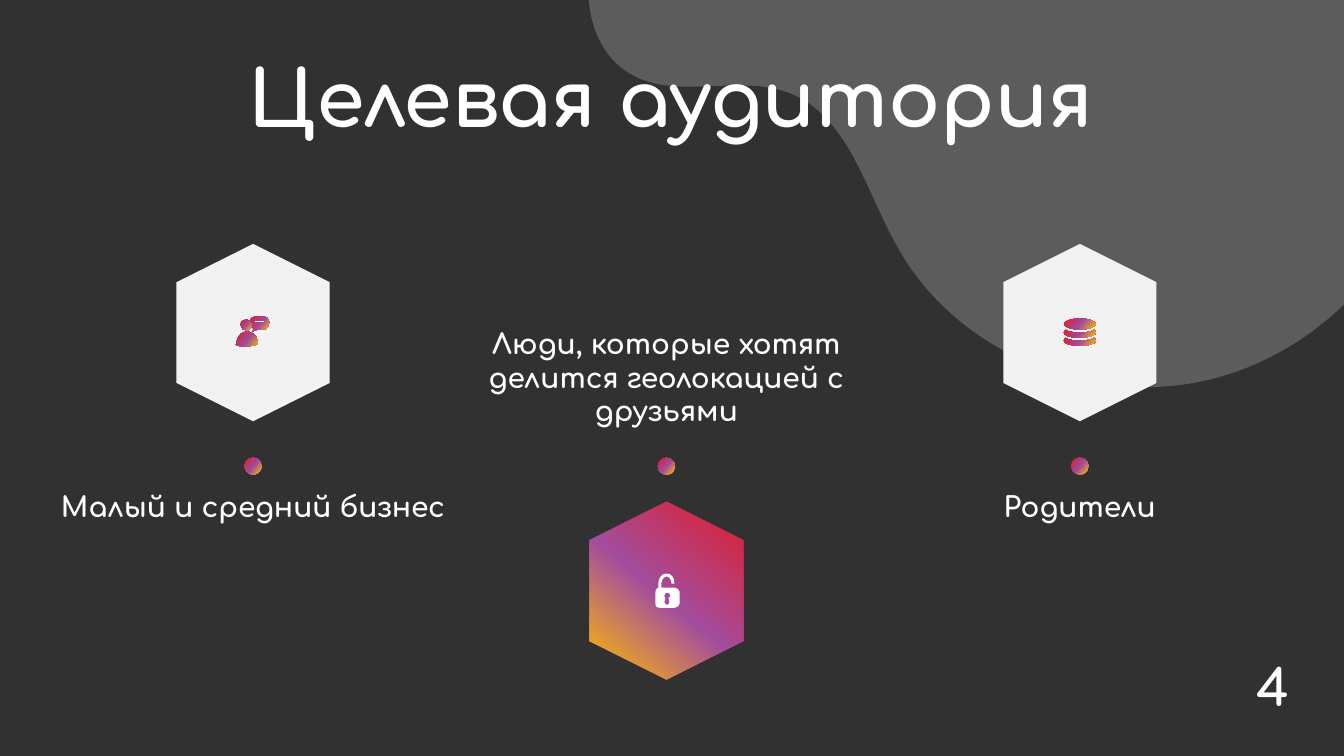
from copy import deepcopy
from dataclasses import dataclass

from lxml import etree
from pptx import Presentation
from pptx.dml.color import RGBColor
from pptx.enum.shapes import MSO_SHAPE
from pptx.enum.text import MSO_ANCHOR, MSO_AUTO_SIZE, PP_ALIGN
from pptx.oxml.ns import qn
from pptx.util import Emu, Pt

HEXAGON, OVAL = MSO_SHAPE.HEXAGON, MSO_SHAPE.OVAL
TOP, MIDDLE = MSO_ANCHOR.TOP, MSO_ANCHOR.MIDDLE
CENTER = PP_ALIGN.CENTER
NO_RESIZE, GROW = MSO_AUTO_SIZE.NONE, MSO_AUTO_SIZE.SHAPE_TO_FIT_TEXT

# Grid of fine cells, 100 to the inch; every length below is a count of cells
CELL = 9144
COLUMNS, ROWS = 1333, 750
FIRST_CENTER, PITCH = 251, 410
HEXAGON_SIZE = (176, 152)
DOT_ROW, DOT_SIZE = 462.5, 17

FONT = "Comfortaa"
COLORS = {"background": "313131", "blob": "FEFEFE", "text": "FFFFFF", "tile": "F2F2F2"}
GRADIENT = ((0, "DF1E2C"), (0.53, "A34D9D"), (1, "FFC000"))
GRADIENT_ANGLE = 320  # counter-clockwise
BLOB_ALPHA = 21000


@dataclass(frozen=True)
class Contour:
    """A start point, then lines (x, y) and cubic curves (x1, y1, x2, y2, x, y)."""
    start: tuple
    segments: tuple

    def points(self) -> list:
        return [segment[i:i + 2] for segment in self.segments
                for i in range(0, len(segment), 2)]


@dataclass(frozen=True)
class Layer:
    contours: tuple
    drop: int = 0


@dataclass(frozen=True)
class Audience:
    label: str
    label_top: int
    label_size: tuple
    anchor: MSO_ANCHOR
    hexagon_row: int
    hexagon_fill: str | None  # None means the gradient
    icon: tuple
    icon_fill: str | None
    icon_lid: tuple | None = None  # ellipse: centre x, centre y, width, height


# Outlines, measured from the centre of their hexagon (the blob from the corner)
BLOB = Contour((584, 0), (
    (586, 29, 599, 57, 623, 72), (669, 101, 731, 73, 782, 92),
    (841, 114, 858, 188, 889, 243), (948, 352, 1087, 407, 1206, 375),
    (1254, 362, 1298, 336, COLUMNS, 302), (COLUMNS, 0)))
DISK = Contour((14, -3), (
    (11, -1, 6, 0, 0, 0), (-6, 0, -12, -1, -14, -3), (-15, -2, -16, -1, -16, 0),
    (-16, 3, -9, 5, 0, 5), (8, 5, 16, 3, 16, 0), (16, -1, 15, -2, 14, -3)))
BODY = Contour((-6, -1), (
    (-16, -1, -17, 12, -17, 12), (-11, 16, 4, 12, 4, 12), (5, 12, 5, -1, -6, -1)))
HEAD = Contour((-3, -12), (
    (-4, -12, -6, -13, -7, -13), (-11, -12, -13, -10, -12, -7),
    (-12, -4, -9, -2, -6, -2), (-4, -2, -3, -4, -2, -5), (-1, -9, -3, -12, -3, -12)))
BUBBLE = Contour((9, -16), (
    (3, -16), (0, -16, -2, -15, -3, -13), (-3, -12, -1, -11, -1, -10),
    (0, -8, 0, -6, -1, -5), (0, -4, 0, -4, 1, -4), (-1, -1), (5, -3), (9, -3),
    (13, -3, 16, -6, 16, -10), (16, -14, 13, -16, 9, -16)))
BUBBLE_LINES = (Contour((11, -8), ((1, -8), (1, -9), (11, -9))),
                Contour((11, -10), ((1, -10), (1, -12), (11, -12))))
LOCK = Contour((8, -3), (
    (-5, -3), (-5, -7), (-5, -11, -2, -14, 0, -14), (3, -14, 5, -11, 5, -7), (8, -7),
    (8, -13, 5, -17, 0, -17), (-4, -17, -8, -13, -8, -7), (-8, -3),
    (-10, -2, -11, -1, -11, 2), (-11, 13), (-11, 15, -10, 17, -7, 17), (8, 17),
    (10, 17, 13, 15, 13, 13), (13, 1), (13, -1, 10, -3, 8, -3)))
KEYHOLE = Contour((2, 7), (
    (3, 11), (3, 13, 2, 14, 1, 14), (-1, 14, -2, 13, -2, 11), (-1, 7),
    (-2, 7, -2, 6, -2, 5), (-2, 3, -1, 2, 1, 2), (2, 2, 4, 3, 4, 5), (4, 6, 3, 7, 2, 7)))

PERSON_ICON = (Layer((BODY,)), Layer((HEAD,)), Layer((BUBBLE, *BUBBLE_LINES)))
LOCK_ICON = (Layer((LOCK, KEYHOLE)),)
DISKS_ICON = (Layer((DISK,), 8), Layer((DISK,)))

AUDIENCES = (
    Audience("Малый и средний бизнес", 481, (412, 87), TOP, 330,
             COLORS["tile"], PERSON_ICON, None),
    Audience("Люди, которые хотят делится геолокацией с друзьями", 322, (445, 104), MIDDLE,
             586, None, LOCK_ICON, COLORS["text"]),
    Audience("Родители", 481, (467, 143), TOP, 330,
             COLORS["tile"], DISKS_ICON, None, (0, -8.5, 31, 11)),
)


def cells(count: float) -> Emu:
    return Emu(round(count * CELL))


def paint(shape, color: str | None) -> None:
    """Fill with one colour, or with the gradient when there is none."""
    shape.shadow.inherit = False
    shape.line.fill.background()
    if color:
        shape.fill.solid()
        shape.fill.fore_color.rgb = RGBColor.from_string(color)
        return
    shape.fill.gradient()
    shape.fill.gradient_angle = GRADIENT_ANGLE
    stop_list = shape._element.spPr.find(qn("a:gradFill")).find(qn("a:gsLst"))
    stop_list.append(deepcopy(stop_list[-1]))
    for stop, (position, stop_color) in zip(shape.fill.gradient_stops, GRADIENT):
        stop.position = position
        stop.color.rgb = RGBColor.from_string(stop_color)


def bend(shape, contours: tuple) -> None:
    """Join the three lines of each curved segment into one cubic curve."""
    lines = iter(list(shape._element.spPr.iter(qn("a:lnTo"))))
    for contour in contours:
        for segment in contour.segments:
            run = [next(lines) for _ in range(len(segment) // 2)]
            if len(run) == 1:
                continue
            curve = etree.Element(qn("a:cubicBezTo"))
            run[0].addprevious(curve)
            for line in run:
                curve.append(line[0])
                line.getparent().remove(line)


def add_outline(shapes, contours: tuple, x: float, y: float, color: str | None):
    """Draw closed contours as one freeform, in tenths of a cell."""
    def place(point: tuple) -> tuple:
        return (x + point[0]) * 10, (y + point[1]) * 10

    builder = shapes.build_freeform(*place(contours[0].start), scale=CELL / 10)
    for index, contour in enumerate(contours):
        if index:
            builder.move_to(*place(contour.start))
        builder.add_line_segments([place(p) for p in contour.points()], close=True)
    shape = builder.convert_to_shape()
    bend(shape, contours)
    paint(shape, color)
    return shape


def add_centered(shapes, kind, x: float, y: float, width: float, height: float,
                 color: str | None):
    shape = shapes.add_shape(kind, cells(x - width / 2), cells(y - height / 2),
                             cells(width), cells(height))
    paint(shape, color)
    return shape


def write(box, text: str, size: float, anchor, auto_size=NO_RESIZE) -> None:
    frame = box.text_frame
    frame.word_wrap = True
    frame.auto_size = auto_size
    frame.vertical_anchor = anchor
    paragraph = frame.paragraphs[0]
    paragraph.text = text
    paragraph.alignment = CENTER
    font = paragraph.font
    font.name, font.size, font.bold = FONT, Pt(size), True
    font.color.rgb = RGBColor.from_string(COLORS["text"])


def add_audience(page, audience: Audience, x: int) -> None:
    y = audience.hexagon_row
    tile = add_centered(page.shapes, HEXAGON, x, y, *HEXAGON_SIZE, audience.hexagon_fill)
    tile.rotation = 90
    icon = page.shapes.add_group_shape()
    for layer in audience.icon:
        add_outline(icon.shapes, layer.contours, x, y + layer.drop, audience.icon_fill)
    if audience.icon_lid:
        dx, dy, width, height = audience.icon_lid
        add_centered(icon.shapes, OVAL, x + dx, y + dy, width, height, audience.icon_fill)
    add_centered(page.shapes, OVAL, x, DOT_ROW, DOT_SIZE, DOT_SIZE, None)
    width, height = audience.label_size
    label = page.shapes.add_textbox(cells(x - width / 2), cells(audience.label_top),
                                    cells(width), cells(height))
    write(label, audience.label, 20, audience.anchor)


def main() -> None:
    deck = Presentation()
    deck.slide_width, deck.slide_height = cells(COLUMNS), cells(ROWS)
    page = deck.slides.add_slide(deck.slide_layouts[5])
    page.background.fill.solid()
    page.background.fill.fore_color.rgb = RGBColor.from_string(COLORS["background"])

    # Title
    title = page.shapes.title
    title.left, title.top, title.width, title.height = map(cells, (222, 43, 888, 118))
    write(title, "Целевая аудитория", 55.5, MIDDLE)
    title.text_frame.paragraphs[0].line_spacing = 0.9

    # Translucent blob behind the title
    blob = add_outline(page.shapes, (BLOB,), 0, 0, COLORS["blob"])
    blob_color = blob._element.spPr.find(qn("a:solidFill"))[0]
    etree.SubElement(blob_color, qn("a:alpha")).set("val", str(BLOB_ALPHA))
    title._element.addprevious(blob._element)

    # Audiences
    for index, audience in enumerate(AUDIENCES):
        add_audience(page, audience, FIRST_CENTER + index * PITCH)

    # Page number
    number = page.shapes.add_textbox(*map(cells, (1224, 641, 78, 81)))
    write(number, "4", 36, TOP, GROW)
    number.text_frame.margin_top = number.text_frame.margin_bottom = cells(10)

    deck.save("out.pptx")


if __name__ == "__main__":
    main()
